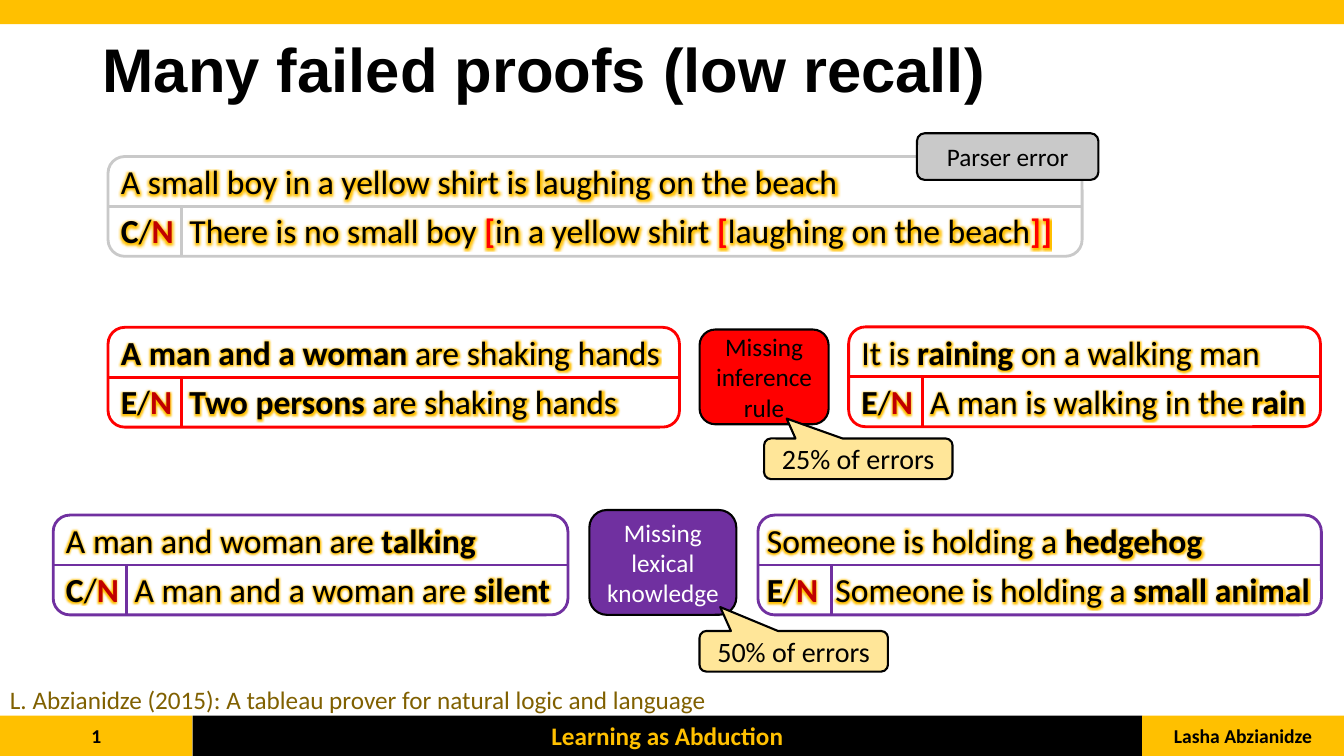
from lxml.etree import SubElement
from pptx import Presentation
from pptx.dml.color import RGBColor
from pptx.enum.shapes import MSO_CONNECTOR as Connector, MSO_SHAPE as Shape
from pptx.enum.text import MSO_ANCHOR as Anchor, PP_ALIGN as Align
from pptx.oxml import parse_xml
from pptx.oxml.ns import nsdecls, qn
from pptx.util import Pt

BLACK = RGBColor(0x00, 0x00, 0x00)
WHITE = RGBColor(0xFF, 0xFF, 0xFF)
GOLD = RGBColor(0xFF, 0xC0, 0x00)
CREAM = RGBColor(0xFF, 0xE6, 0x99)
OLIVE = RGBColor(0x80, 0x60, 0x00)
GREY = RGBColor(0xC9, 0xC9, 0xC9)
RED = RGBColor(0xFF, 0x00, 0x00)
DARK_RED = RGBColor(0xC0, 0x00, 0x00)
PURPLE = RGBColor(0x70, 0x30, 0xA0)

PANEL_HEIGHT = 71.3
LABEL_WIDTH = 52.6
FOOTER_TOP, FOOTER_HEIGHT = 511.2, 28.8


def add_span(para, text, size=18, color=BLACK, bold=False, face="Calibri", glow=False):
    span = para.add_run()
    span.text = text
    font = span.font
    font.size, font.bold, font.name = Pt(size), bold, face
    font.color.rgb = color
    if glow:
        fill = font._element.find(qn("a:solidFill"))
        fill.addnext(parse_xml(
            f'<a:effectLst {nsdecls("a")}><a:glow rad="{Pt(5)}">'
            f'<a:srgbClr val="{GOLD}"/></a:glow></a:effectLst>'))


def add_block(shapes, kind, left, top, width, height, fill, line=None, weight=1.5):
    block = shapes.add_shape(kind, Pt(left), Pt(top), Pt(width), Pt(height))
    block.shadow.inherit = False
    block.fill.solid()
    block.fill.fore_color.rgb = fill
    if line is None:
        block.line.fill.background()
    else:
        block.line.color.rgb = line
        block.line.width = Pt(weight)
    block.text_frame.word_wrap = True
    return block


def add_label(shapes, kind, place, text, fill, line=None, **style):
    """Block with centred text, one paragraph for each line of the text."""
    block = add_block(shapes, kind, *place, fill, line)
    frame = block.text_frame
    frame.vertical_anchor = Anchor.MIDDLE
    for index, words in enumerate(text.split("\n")):
        para = frame.add_paragraph() if index else frame.paragraphs[0]
        para.alignment = Align.CENTER
        add_span(para, words, **style)
    return block


def add_callout(shapes, place, text, tip):
    callout = add_label(shapes, Shape.ROUNDED_RECTANGULAR_CALLOUT, place, text,
                        CREAM, BLACK, size=20)
    callout.adjustments[0], callout.adjustments[1] = tip


def add_rule(shapes, x1, y1, x2, y2, color):
    rule = shapes.add_connector(Connector.STRAIGHT, Pt(x1), Pt(y1), Pt(x2), Pt(y2))
    rule.line.color.rgb = color
    rule.line.width = Pt(2)
    SubElement(rule._element.spPr, qn("a:effectLst"))


def add_sentence(para, spans):
    """Plain strings are regular text; (text, colour) pairs are bold."""
    for span in spans:
        if isinstance(span, str):
            add_span(para, span, size=24, glow=True)
        else:
            text, color = span
            add_span(para, text, size=24, color=color, bold=True, glow=True)


def add_panel(page, left, top, width, color, premise, gold_label, hypothesis, inset=5.7):
    """Premise over hypothesis, with the gold and predicted labels in a side cell."""
    shapes = page.shapes.add_group_shape().shapes
    box = add_block(shapes, Shape.ROUNDED_RECTANGLE, left, top, width, PANEL_HEIGHT,
                    WHITE, color, 2)
    frame = box.text_frame
    frame.vertical_anchor = Anchor.TOP
    frame.margin_left = Pt(inset)
    frame.margin_top = frame.margin_right = frame.margin_bottom = 0
    upper, lower = frame.paragraphs[0], frame.add_paragraph()
    upper.alignment = lower.alignment = Align.LEFT
    tabs = SubElement(lower._p.get_or_add_pPr(), qn("a:tabLst"))
    SubElement(tabs, qn("a:tab"), pos=str(Pt(49)), algn="l")
    lower.space_before = Pt(6)
    add_sentence(upper, premise)
    add_sentence(lower, [(gold_label, BLACK), "/", ("N", DARK_RED), "\t", *hypothesis])

    middle, bottom = top + PANEL_HEIGHT / 2, top + PANEL_HEIGHT
    add_rule(shapes, left, middle, left + width, middle, color)
    add_rule(shapes, left + LABEL_WIDTH, bottom, left + LABEL_WIDTH, middle, color)


def add_title(page, text):
    title = page.shapes.title
    title.left, title.top, title.width, title.height = Pt(66), Pt(18.7), Pt(828), Pt(66.2)
    title.text_frame.vertical_anchor = Anchor.MIDDLE
    para = title.text_frame.paragraphs[0]
    para.alignment = Align.LEFT
    para.line_spacing = 0.9
    add_span(para, text, size=44, bold=True, face="Arial")


def add_footer(page):
    cells = [
        (0, 137.5, "1", GOLD, BLACK, 14),
        (137.5, 678.3, "Learning as Abduction", BLACK, GOLD, 18),
        (815.8, 144.2, "Lasha Abzianidze", GOLD, BLACK, 14),
    ]
    for left, width, text, fill, color, size in cells:
        add_label(page.shapes, Shape.RECTANGLE, (left, FOOTER_TOP, width, FOOTER_HEIGHT),
                  text, fill, size=size, color=color, bold=True)


def add_citation(page, text):
    box = page.shapes.add_textbox(Pt(0), Pt(485.3), Pt(516), Pt(29))
    box.text_frame.word_wrap = True
    add_span(box.text_frame.paragraphs[0], text, color=OLIVE)


def main():
    deck = Presentation()
    deck.slide_width, deck.slide_height = Pt(960), Pt(540)
    page = deck.slides.add_slide(deck.slide_layouts[5])
    shapes = page.shapes

    add_block(shapes, Shape.RECTANGLE, 0, 0, 960, 17.2, GOLD)
    add_title(page, "Many failed proofs (low recall)")
    add_footer(page)
    add_citation(page, "L. Abzianidze (2015): A tableau prover for natural logic and language")

    add_panel(page, 606.2, 233.5, 337, RED,
              ["It is ", ("raining", BLACK), " on a walking man"],
              "E", ["A man is walking in the ", ("rain", BLACK)])
    add_panel(page, 77.2, 233.8, 408.2, RED,
              [("A man and a woman ", BLACK), "are shaking hands"],
              "E", [("Two persons ", BLACK), "are shaking hands"])
    add_panel(page, 38, 367.9, 367.7, PURPLE,
              ["A man and woman are ", ("talking", BLACK)],
              "C", ["A man and a woman are ", ("silent", BLACK)])
    add_panel(page, 541.4, 367.9, 402.5, PURPLE,
              ["Someone is holding a ", ("hedgehog", BLACK)],
              "E", ["Someone is holding a ", ("small animal", BLACK)], inset=2.9)
    add_panel(page, 77.2, 111.8, 695.8, GREY,
              ["A small boy in a yellow shirt is laughing on the beach"],
              "C", ["There is no small boy ", ("[", RED), "in a yellow shirt ",
                    ("[", RED), "laughing on the beach", ("]]", RED)])

    causes = [
        ((655, 95.2, 129.6, 33.3), "Parser error", GREY, BLACK),
        ((499.7, 235.4, 92.2, 67.7), "Missing inference\nrule", RED, BLACK),
        ((421, 364.3, 105, 74.9), "Missing lexical knowledge", PURPLE, WHITE),
    ]
    for place, text, fill, color in causes:
        add_label(shapes, Shape.ROUNDED_RECTANGLE, place, text, fill, BLACK, color=color)

    add_callout(shapes, (499.7, 450.7, 134.6, 29), "50% of errors", (-0.39, -1.09))
    add_callout(shapes, (545.8, 313.2, 134.6, 29), "25% of errors", (-0.38, -0.99))

    deck.save("out.pptx")


if __name__ == "__main__":
    main()
